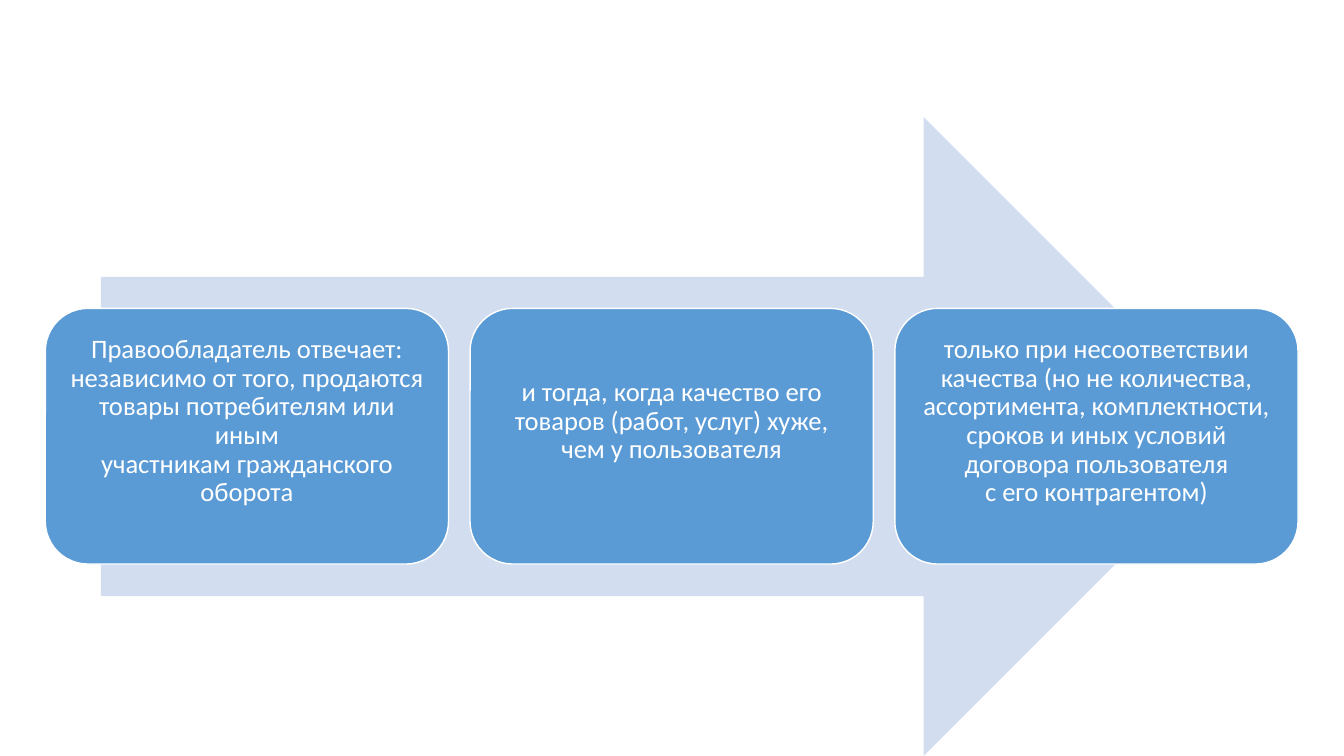
import pptx
import pptx.util
from pptx.dml.color import RGBColor
from pptx.enum.shapes import MSO_SHAPE
from pptx.enum.text import MSO_ANCHOR, PP_ALIGN

Pt = pptx.util.Pt

COLORS = {"arrow": "D2DEEF", "card": "5B9BD5", "white": "FFFFFF"}

# Each card holds one or more lines, parted by line breaks
CARDS = [
    ["Правообладатель отвечает:",
     "независимо от того, продаются товары потребителям или иным",
     "участникам гражданского оборота"],
    ["и тогда, когда качество его товаров (работ, услуг) хуже, чем у пользователя"],
    ["только при несоответствии качества (но не количества, ассортимента, "
     "комплектности, сроков и иных условий договора пользователя",
     "с его контрагентом)"],
]

LEFT, TOP, WIDTH, HEIGHT = 32.4, 220.3, 288, 182.6
PITCH = 303.4

FRAME = {"word_wrap": True, "vertical_anchor": MSO_ANCHOR.MIDDLE,
         "margin_left": Pt(6), "margin_right": Pt(6),
         "margin_top": Pt(6), "margin_bottom": Pt(27)}
PARA = {"alignment": PP_ALIGN.CENTER, "line_spacing": 0.9}
FONT = {"name": "Calibri", "size": Pt(19)}


def color(name):
    return RGBColor.from_string(COLORS[name])


def format_with(item, values):
    for key, value in values.items():
        setattr(item, key, value)


def add_block(slide, kind, box, fill):
    block = slide.shapes.add_shape(kind, *map(Pt, box))
    block.shadow.inherit = False
    block.fill.solid()
    block.fill.fore_color.rgb = color(fill)
    block.line.fill.background()
    return block


def add_card(slide, left, lines):
    card = add_block(slide, MSO_SHAPE.ROUNDED_RECTANGLE,
                     (left, TOP, WIDTH, HEIGHT), "card")
    card.line.color.rgb = color("white")
    card.line.width = Pt(1)
    format_with(card.text_frame, FRAME)
    para = card.text_frame.paragraphs[0]
    format_with(para, PARA)
    for index, line in enumerate(lines):
        if index:
            para.add_line_break()
        run = para.add_run()
        run.text = line
        format_with(run.font, FONT)
        run.font.color.rgb = color("white")


def main():
    deck = pptx.Presentation()
    deck.slide_width, deck.slide_height = Pt(960), Pt(540)
    slide = deck.slides.add_slide(deck.slide_layouts[6])

    # Arrow behind the cards
    add_block(slide, MSO_SHAPE.RIGHT_ARROW, (72, 83.6, 816, 456.4), "arrow")

    # Row of cards
    for index, lines in enumerate(CARDS):
        add_card(slide, LEFT + index * PITCH, lines)

    deck.save("out.pptx")


if __name__ == "__main__":
    main()
